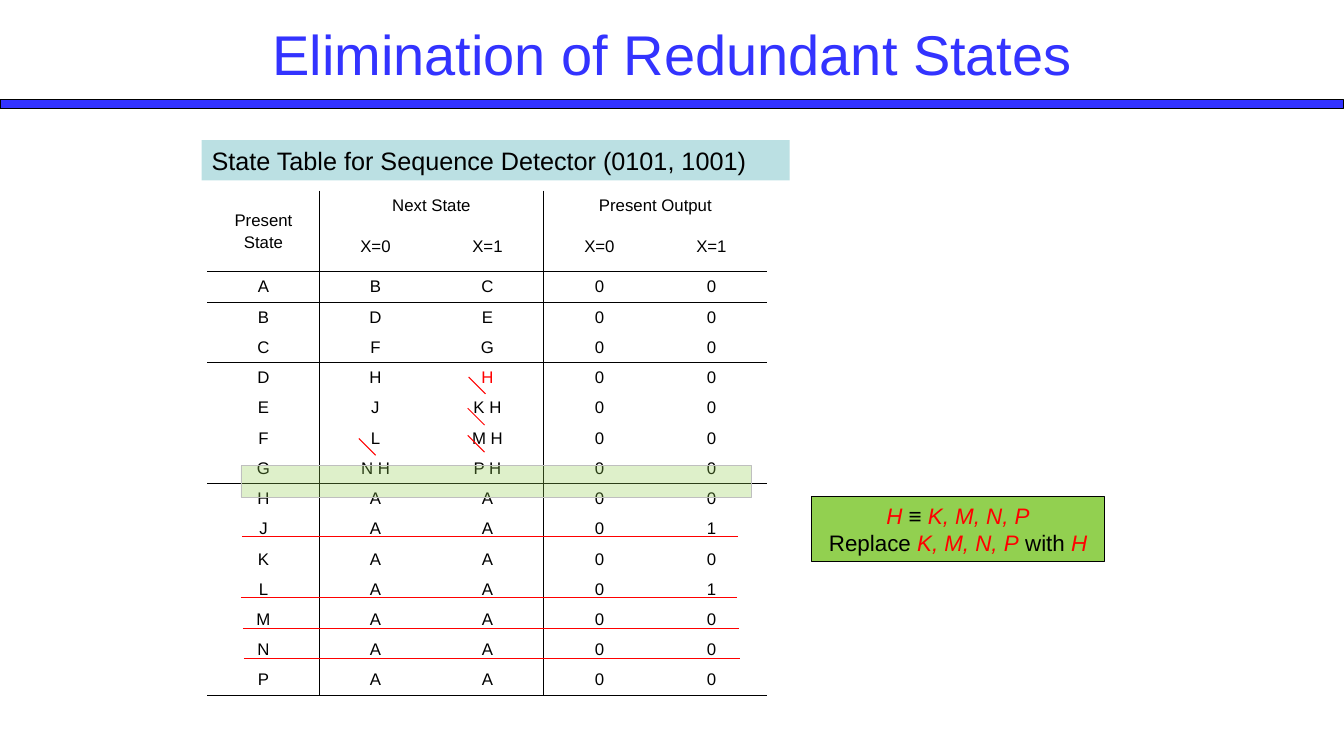
from lxml.etree import SubElement
from pptx import Presentation
from pptx.dml.color import RGBColor
from pptx.enum.shapes import MSO_CONNECTOR, MSO_SHAPE
from pptx.enum.text import MSO_ANCHOR, PP_ALIGN
from pptx.oxml.ns import qn
from pptx.util import Pt

TITLE = "Elimination of Redundant States"
CAPTION = "State Table for Sequence Detector (0101, 1001)"
STATES = [
    ("Present\nState", "Next State", "", "Present Output", ""),
    ("", "X=0", "X=1", "X=0", "X=1"),
    ("A", "B", "C", "0", "0"),
    ("B", "D", "E", "0", "0"),
    ("C", "F", "G", "0", "0"),
    ("D", "H", "H", "0", "0"),
    ("E", "J", "K H", "0", "0"),
    ("F", "L", "M H", "0", "0"),
    ("G", "N H", "P H", "0", "0"),
    ("H", "A", "A", "0", "0"),
    ("J", "A", "A", "0", "1"),
    ("K", "A", "A", "0", "0"),
    ("L", "A", "A", "0", "1"),
    ("M", "A", "A", "0", "0"),
    ("N", "A", "A", "0", "0"),
    ("P", "A", "A", "0", "0"),
]
MERGES = [((0, 0), (1, 0)), ((0, 1), (0, 2)), ((0, 3), (0, 4))]
RULED_ROWS = {1, 2, 4, 8, 15}
RULED_COLS = {0, 2}
REPLACED_CELL = (5, 2)
NOTE = [
    [("H ", True), ("≡", False), (" K, M, N, P", True)],
    [("Replace ", False), ("K, M, N, P", True), (" with ", False), ("H", True)],
]
SLASHES = [(334.8, 269.3), (334.1, 291.6), (256.3, 313.2), (334.1, 311)]
STRIKES = [(172.8, 383), (172.1, 427), (173.5, 448.6), (174.2, 470.2)]
SLASH, STRIKE = 12, 354.2
COL_W, ROW_H, SUBHEAD_H = 80, 21.6, 36.2
COLORS = {
    "blue": "3333FF", "black": "000000", "red": "FF0000",
    "teal": "BBE0E3", "green": "92D050", "grey": "BFBFBF",
}


def rgb(name):
    return RGBColor.from_string(COLORS[name])


def style(r, size, color):
    r.font.name = "Arial"
    r.font.size = Pt(size)
    r.font.color.rgb = rgb(color)


def add_box(slide, x, y, w, h, fill, line=None, width=0.75):
    sp = slide.shapes.add_shape(MSO_SHAPE.RECTANGLE, Pt(x), Pt(y), Pt(w), Pt(h))
    sp.shadow.inherit = False
    sp.fill.solid()
    sp.fill.fore_color.rgb = rgb(fill)
    if line:
        sp.line.color.rgb = rgb(line)
        sp.line.width = Pt(width)
    else:
        sp.line.fill.background()
    return sp


def add_line(slide, x, y, dx, dy):
    ln = slide.shapes.add_connector(
        MSO_CONNECTOR.STRAIGHT, Pt(x), Pt(y), Pt(x + dx), Pt(y + dy))
    ln.line.color.rgb = rgb("red")
    ln.line.width = Pt(0.75)
    SubElement(ln._element.spPr, qn("a:effectLst"))


def set_borders(cell, row, col):
    edges = {
        "a:lnL": col - 1 in RULED_COLS, "a:lnR": col in RULED_COLS,
        "a:lnT": row - 1 in RULED_ROWS, "a:lnB": row in RULED_ROWS,
    }
    tc_pr = cell._tc.get_or_add_tcPr()
    for tag, ruled in edges.items():
        ln = SubElement(tc_pr, qn(tag), w=str(Pt(1)))
        if ruled:
            fill = SubElement(ln, qn("a:solidFill"))
            SubElement(fill, qn("a:srgbClr"), val=COLORS["black"])
        else:
            SubElement(ln, qn("a:noFill"))


def add_state_table(slide):
    n_rows, n_cols = len(STATES), len(STATES[0])
    frame = slide.shapes.add_table(
        n_rows, n_cols, Pt(148.2), Pt(136.1), Pt(COL_W * n_cols),
        Pt(ROW_H * (n_rows - 1) + SUBHEAD_H))
    table = frame.table
    table.first_row = table.horz_banding = False
    for col in table.columns:
        col.width = Pt(COL_W)
    for i, row in enumerate(table.rows):
        row.height = Pt(SUBHEAD_H if i == 1 else ROW_H)
    for i, texts in enumerate(STATES):
        for j, text in enumerate(texts):
            cell = table.cell(i, j)
            set_borders(cell, i, j)
            cell.fill.background()
            cell.vertical_anchor = MSO_ANCHOR.MIDDLE
            tf = cell.text_frame
            tf.text = text
            for k, p in enumerate(tf.paragraphs):
                p.alignment = PP_ALIGN.CENTER
                p.font.size = Pt(12)
                if k:
                    p.space_before = Pt(2.4)
                for r in p.runs:
                    style(r, 12, "red" if (i, j) == REPLACED_CELL else "black")
    for start, end in MERGES:
        table.cell(*start).merge(table.cell(*end))


def add_caption(slide):
    tf = add_box(slide, 144, 100.1, 420, 28.8, "teal").text_frame
    tf.word_wrap = True
    tf.text = CAPTION
    p = tf.paragraphs[0]
    p.alignment = PP_ALIGN.LEFT
    style(p.runs[0], 18, "black")


def add_note(slide):
    tf = add_box(slide, 579.6, 355, 209.5, 46.1, "green", "black").text_frame
    tf.word_wrap = True
    for i, parts in enumerate(NOTE):
        p = tf.add_paragraph() if i else tf.paragraphs[0]
        p.alignment = PP_ALIGN.CENTER
        for text, is_state in parts:
            r = p.add_run()
            r.text = text
            style(r, 16, "red" if is_state else "black")
            r.font.italic = is_state


def add_title(slide):
    title = slide.shapes.title
    title.left, title.top, title.width, title.height = map(Pt, (138, 9.4, 684, 57))
    tf = title.text_frame
    tf.text = TITLE
    tf.vertical_anchor = MSO_ANCHOR.MIDDLE
    p = tf.paragraphs[0]
    p.alignment = PP_ALIGN.CENTER
    style(p.runs[0], 40, "blue")


def main():
    prs = Presentation()
    prs.slide_width, prs.slide_height = Pt(960), Pt(540)
    slide = prs.slides.add_slide(prs.slide_layouts[5])
    add_title(slide)
    add_box(slide, 0, 71.2, 960, 6, "blue", "black")
    add_state_table(slide)
    add_caption(slide)
    for x, y in SLASHES:
        add_line(slide, x, y, SLASH, SLASH)
    for x, y in STRIKES:
        add_line(slide, x, y, STRIKE, 0)
    highlight = add_box(slide, 172.1, 332.6, 365, 22.5, "green", "grey", 0.5)
    color = highlight.fill._xPr.find(qn("a:solidFill"))[0]
    SubElement(color, qn("a:alpha"), val="30000")
    add_note(slide)
    prs.save("out.pptx")


if __name__ == "__main__":
    main()
